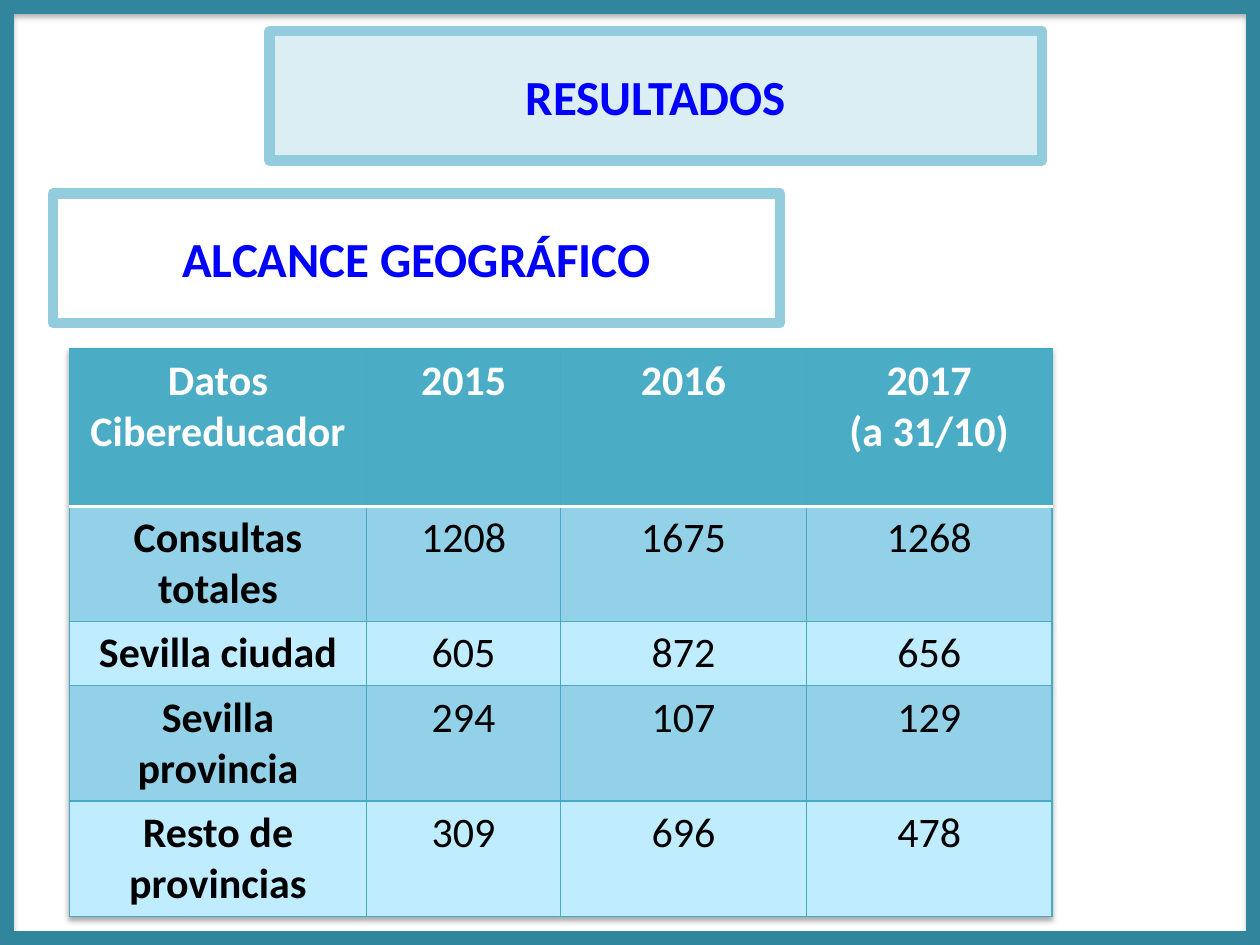
from dataclasses import dataclass
from typing import Any

from lxml import etree
from pptx import Presentation
from pptx import util as u
from pptx.dml.color import RGBColor
from pptx.enum import shapes, text
from pptx.oxml.ns import qn

W, H = 10, 7.5
BLUE, WHITE, BLACK = "0000FF", "FFFFFF", "000000"
TEAL, EDGE, RIM = "4BACC6", "46AAC5", "93CDDD"
BANDS = ("92D1E8", "C0ECFF")


@dataclass
class Box:
    label: str
    left: float
    top: float
    width: float
    height: float
    fill: str


TITLE = Box("RESULTADOS", 0.214, 0.033, 0.613, 0.137, "DBEEF4")
SUBTITLE = Box("ALCANCE GEOGRÁFICO", 0.042, 0.205, 0.577, 0.137, WHITE)
COLS = (2.36, 1.54, 1.95, 1.95)
ROWS = (1.25, 0.91, 0.51, 0.91, 0.91)
DATA = (
    ("Datos Cibereducador", "2015", "2016", "2017\n(a 31/10)"),
    ("Consultas totales", "1208", "1675", "1268"),
    ("Sevilla ciudad", "605", "872", "656"),
    ("Sevilla provincia", "294", "107", "129"),
    ("Resto de provincias", "309", "696", "478"),
)


def rgb(value: str) -> RGBColor:
    return RGBColor.from_string(value)


def paint(target: Any, color: str) -> None:
    target.fill.solid()
    target.fill.fore_color.rgb = rgb(color)


def outline(sp: Any, color: str, width: float) -> None:
    sp.line.color.rgb = rgb(color)
    sp.line.width = u.Pt(width)


def write(tf: Any, label: str, color: str, size: float, bold: bool) -> None:
    tf.text = label
    for p in tf.paragraphs:
        p.alignment = text.PP_ALIGN.CENTER
        for r in p.runs:
            for name, value in {"name": "Calibri", "size": u.Pt(size), "bold": bold}.items():
                setattr(r.font, name, value)
            r.font.color.rgb = rgb(color)


def add_shadow(effects: Any) -> None:
    shadow = etree.SubElement(effects, qn("a:outerShdw"), blurRad=str(u.Pt(3.1)),
                              dist=str(u.Pt(1.8)), dir="5400000", rotWithShape="0")
    color = etree.SubElement(shadow, qn("a:srgbClr"), val=BLACK)
    etree.SubElement(color, qn("a:alpha"), val="35000")


def format_box(sp: Any, box: Box) -> None:
    places = {"left": box.left * W, "top": box.top * H,
              "width": box.width * W, "height": box.height * H}
    for name, value in places.items():
        setattr(sp, name, u.Inches(value))
    paint(sp, box.fill)
    outline(sp, RIM, 6)
    etree.SubElement(sp.line._get_or_add_ln(), qn("a:round"))
    tf = sp.text_frame
    for name, value in {"word_wrap": True, "auto_size": text.MSO_AUTO_SIZE.NONE,
                        "vertical_anchor": text.MSO_ANCHOR.MIDDLE}.items():
        setattr(tf, name, value)
    write(tf, box.label, BLUE, 28, True)


def add_frame(s: Any) -> None:
    sp = s.shapes.add_shape(shapes.MSO_SHAPE.FRAME, 0, 0, u.Inches(W), u.Inches(H))
    sp.adjustments[0] = 0.014
    paint(sp, "31859C")
    outline(sp, "31859C", 0.75)
    sp.shadow.inherit = False
    add_shadow(sp._element.spPr.find(qn("a:effectLst")))


def border(cell: Any, side: str, color: str, width: float) -> None:
    ln = etree.Element(qn(f"a:ln{side}"), w=str(u.Pt(width)))
    fill = etree.SubElement(ln, qn("a:solidFill"))
    etree.SubElement(fill, qn("a:srgbClr"), val=color)
    cell._tc.get_or_add_tcPr().append(ln)


def add_data_table(s: Any) -> None:
    table = s.shapes.add_table(len(ROWS), len(COLS), u.Inches(0.55), u.Inches(2.77),
                               u.Inches(sum(COLS)), u.Inches(sum(ROWS))).table
    effects = etree.Element(qn("a:effectLst"))
    add_shadow(effects)
    table._tbl.tblPr.insert(0, effects)
    for column, width in zip(table.columns, COLS):
        column.width = u.Inches(width)
    for i, (row, height) in enumerate(zip(table.rows, ROWS)):
        row.height = u.Inches(height)
        for j, cell in enumerate(row.cells):
            header = i == 0
            write(cell.text_frame, DATA[i][j], WHITE if header else BLACK, 24, header or j == 0)
            for side in "LRTB":
                divider = (side, i) in (("B", 0), ("T", 1))
                border(cell, side, WHITE if divider else EDGE, 2 if divider else 0.75)
            paint(cell, TEAL if header else BANDS[(i - 1) % 2])


def main() -> None:
    prs = Presentation()
    prs.slide_width, prs.slide_height = u.Inches(W), u.Inches(H)
    s = prs.slides.add_slide(prs.slide_layouts[5])
    paint(s.background, WHITE)
    add_frame(s)
    sp = s.shapes.add_shape(shapes.MSO_SHAPE.RECTANGLE, 0, 0, 1, 1)
    sp.shadow.inherit = False
    format_box(sp, SUBTITLE)
    add_data_table(s)
    format_box(s.shapes.title, TITLE)
    prs.save("out.pptx")


if __name__ == "__main__":
    main()
